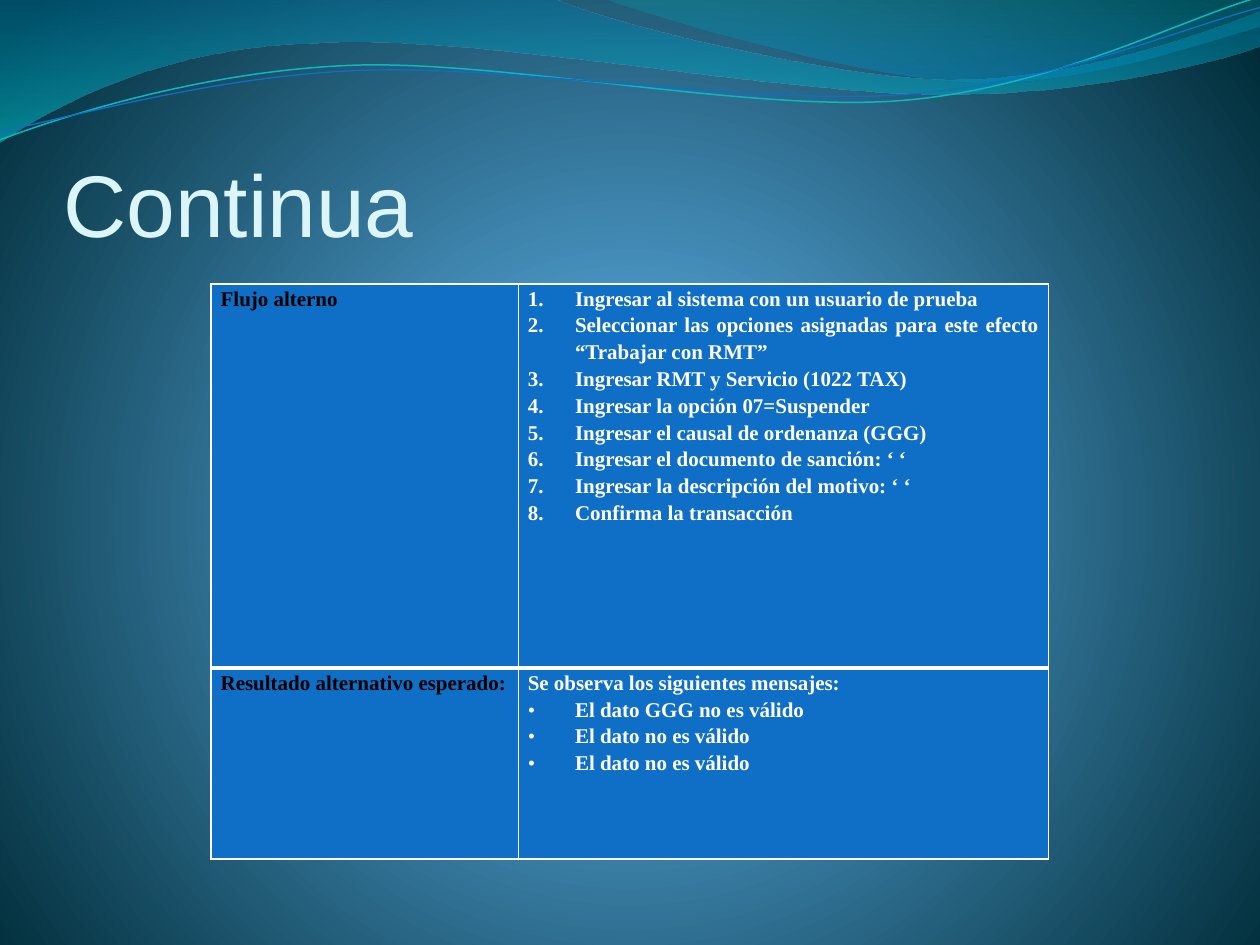
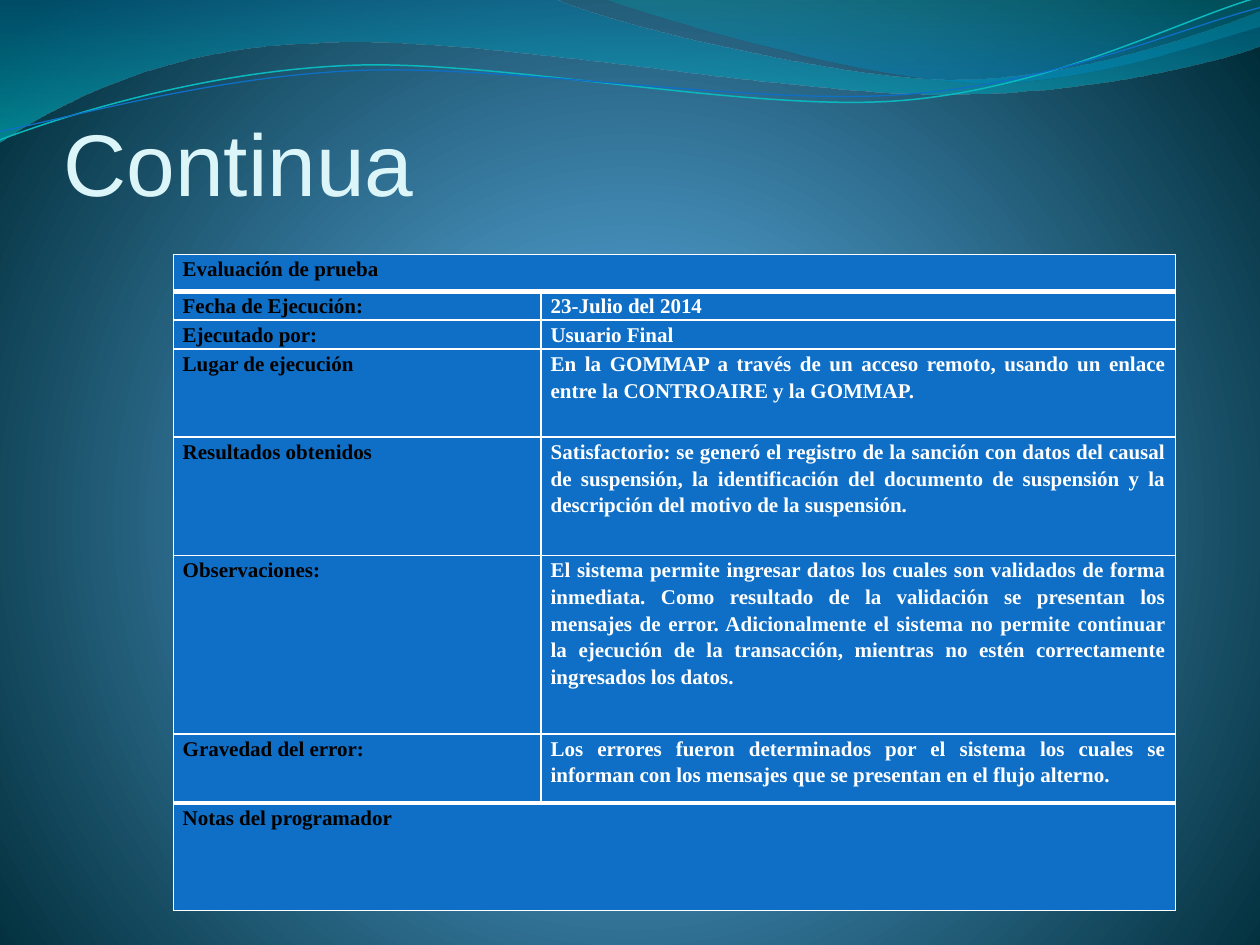
from lxml import etree
from pptx import Presentation
from pptx.dml.color import RGBColor
from pptx.enum.text import MSO_ANCHOR, PP_ALIGN
from pptx.oxml.ns import qn
from pptx.util import Pt

BOTTOM, JUSTIFY = MSO_ANCHOR.BOTTOM, PP_ALIGN.JUSTIFY

WHITE = RGBColor(0xFF, 0xFF, 0xFF)
BLACK = RGBColor(0x00, 0x00, 0x00)
BLUE = RGBColor(0x0F, 0x6F, 0xC6)
TEAL = RGBColor(0x0A, 0xB8, 0xBF)
TITLE_COLOR = RGBColor(0xDB, 0xF5, 0xF9)
SKY = RGBColor(0x4A, 0xA0, 0xD6)
STEEL = RGBColor(0x4C, 0x98, 0xC7)
NIGHT = RGBColor(0x00, 0x2C, 0x38)
WAVE_BLUE = RGBColor(0x00, 0x74, 0xA1)
WAVE_CYAN = RGBColor(0x00, 0xC6, 0xCF)
CREST_TEAL = RGBColor(0x00, 0xA1, 0xA9)
CREST_BLUE = RGBColor(0x00, 0x8B, 0xBF)

TITLE_FONT, TABLE_FONT = "Arial", "Times New Roman"
THIN, THICK = Pt(1), Pt(3)
FIRST_WAVE_ID = 101

# Paragraph markers: tag and attributes
PLAIN = None
NUMBER = ("a:buAutoNum", {"type": "arabicPeriod"})
BULLET = ("a:buChar", {"char": "•"})

# Waves, in points: one point is a straight step, three are a Bézier curve
BANDS = [
    ((0, 0),
     [[(316.8, -0.7)],
      [(342.7, 12.2), (478.1, 45.4), (545.8, 45.4)],
      [(614.2, 45.4), (689.8, 18.7), (720, 6.5)],
      [(720.7, 25.9)],
      [(707.8, 31.7), (626.4, 54.7), (537.1, 54)],
      [(446.4, 54), (275, 20.2), (185, 24.5)],
      [(92.9, 25.9), (33.1, 59.8), (-0.7, 81.4)]],
     [(0, WAVE_BLUE, 45), (100, WAVE_CYAN, 55)]),
    ((344.9, -0.7),
     [[(366.5, 7.9), (491, 44.6), (553.7, 46.8)],
      [(616.3, 49.7), (691.9, 23), (720, 15.1)],
      [(720, 0)]],
     [(0, CREST_TEAL, 30), (80, CREST_BLUE, 45)]),
]
STRANDS = [
    ((0, 79.9),
     [[(34.6, 67), (113.8, 41), (199.4, 37.4)],
      [(284.4, 33.8), (427, 64.1), (513.4, 57.6)],
      [(599.8, 51.1), (675.4, 10.8), (718.6, -1.4)]],
     TEAL, 0.85),
    ((0, 74.9),
     [[(33.8, 69.1), (118.1, 43.9), (203.8, 40.3)],
      [(290.2, 36.7), (429.8, 60.5), (516.2, 54)],
      [(601.9, 48.2), (677.5, 15.1), (720, 4.3)]],
     BLUE, 0.75),
]

# Each row: height, label, value paragraphs; a row without values spans both columns
PAGES = [
    {
        "title_height": 90, "left": 120.7, "top": 162.25, "columns": [175.5, 303],
        "thick_rules": {1},
        "rows": [
            (219.5, "Flujo alterno", [
                (NUMBER, "Ingresar al sistema con un usuario de prueba"),
                (NUMBER, "Seleccionar las opciones asignadas para este efecto “Trabajar con RMT”"),
                (NUMBER, "Ingresar RMT y Servicio (1022 TAX)"),
                (NUMBER, "Ingresar la opción 07=Suspender"),
                (NUMBER, "Ingresar el causal de ordenanza (GGG)"),
                (NUMBER, "Ingresar el documento de sanción: ‘ ‘"),
                (NUMBER, "Ingresar la descripción del motivo: ‘ ‘"),
                (NUMBER, "Confirma la transacción"),
            ]),
            (109, "Resultado alternativo esperado:", [
                (PLAIN, "Se observa los siguientes mensajes:"),
                (BULLET, "El dato GGG no es válido"),
                (BULLET, "El dato no es válido"),
                (BULLET, "El dato no es válido"),
            ]),
        ],
    },
    {
        "title_height": 67, "left": 99, "top": 145.5, "columns": [210.25, 362.5],
        "thick_rules": {1, 7},
        "rows": [
            (20.9, "Evaluación de prueba", []),
            (15.4, "Fecha de Ejecución:", [(PLAIN, "23-Julio del 2014")]),
            (15.4, "Ejecutado por:", [(PLAIN, "Usuario Final")]),
            (50.3, "Lugar de ejecución", [
                (PLAIN, "En la GOMMAP a través de un acceso remoto, usando un enlace "
                        "entre la CONTROAIRE y la GOMMAP."),
            ]),
            (67.5, "Resultados obtenidos", [
                (PLAIN, "Satisfactorio: se generó el registro de la sanción con datos del causal "
                        "de suspensión, la identificación del documento de suspensión y la "
                        "descripción del motivo de la suspensión."),
            ]),
            (102, "Observaciones:", [
                (PLAIN, "El sistema permite ingresar datos los cuales son validados de forma "
                        "inmediata. Como resultado de la validación se presentan los mensajes de "
                        "error. Adicionalmente el sistema no permite continuar la ejecución de la "
                        "transacción, mientras no estén correctamente ingresados los datos."),
            ]),
            (39.5, "Gravedad del error:", [
                (PLAIN, "Los errores fueron determinados por el sistema los cuales se informan "
                        "con los mensajes que se presentan en el flujo alterno."),
            ]),
            (61.5, "Notas del programador", []),
        ],
    },
]


def set_gradient(fill, owner, stops):
    """Give the fill its (position, colour, opacity) stops and return its XML."""
    fill.gradient()
    gradient = owner.find(".//" + qn("a:gradFill"))
    for child in list(gradient):
        gradient.remove(child)
    stop_list = etree.SubElement(gradient, qn("a:gsLst"))
    for position, color, opacity in stops:
        stop = etree.SubElement(stop_list, qn("a:gs"), pos=str(position * 1000))
        tint = etree.SubElement(stop, qn("a:srgbClr"), val=str(color))
        if opacity < 100:
            etree.SubElement(tint, qn("a:alpha"), val=str(opacity * 1000))
    return gradient


def add_wave(page, start, steps, closed):
    """Draw an outline, turning each three-point step into a Bézier curve."""
    builder = page.shapes.build_freeform(Pt(start[0]), Pt(start[1]))
    points = [(Pt(x), Pt(y)) for step in steps for x, y in step]
    builder.add_line_segments(points, close=closed)
    wave = builder.convert_to_shape()
    wave.shadow.inherit = False
    lines = iter(wave.element.findall(".//" + qn("a:lnTo")))
    for step in steps:
        first = next(lines)
        if len(step) == 3:
            curve = etree.Element(qn("a:cubicBezTo"))
            first.addprevious(curve)
            for line in (first, next(lines), next(lines)):
                curve.append(line[0])
                line.getparent().remove(line)
    return wave


deck = Presentation()
deck.slide_width, deck.slide_height = Pt(720), Pt(540)
pages = [deck.slides.add_slide(deck.slide_layouts[6]) for content in PAGES]

# Shared background: radial glow on the master
master = deck.slide_master
glow = set_gradient(master.background.fill, master.element,
                    [(0, SKY, 100), (25, STEEL, 100), (100, NIGHT, 100)])
circle = etree.SubElement(glow, qn("a:path"), path="circle")
etree.SubElement(circle, qn("a:fillToRect"), l="10000", t="110000", r="10000", b="100000")

# Shared waves along the top, drawn once and moved to the master
waves = []
for start, steps, stops in BANDS:
    band = add_wave(pages[0], start, steps, True)
    shade = set_gradient(band.fill, band.element, stops)
    etree.SubElement(shade, qn("a:lin"), ang="5400000", scaled="0")
    band.line.fill.background()
    waves.append(band)
for start, steps, color, width in STRANDS:
    strand = add_wave(pages[0], start, steps, False)
    strand.fill.background()
    strand.line.color.rgb = color
    strand.line.width = Pt(width)
    waves.append(strand)
for wave_id, wave in enumerate(waves, FIRST_WAVE_ID):
    wave.element.find(".//" + qn("p:cNvPr")).set("id", str(wave_id))
    master.element.cSld.spTree.append(wave.element)

for page, content in zip(pages, PAGES):
    # Title
    box = page.shapes.add_textbox(Pt(36.3), Pt(55.5), Pt(648), Pt(content["title_height"]))
    frame = box.text_frame
    frame.word_wrap = True
    frame.vertical_anchor = BOTTOM
    frame.margin_left = frame.margin_right = frame.margin_bottom = 0
    title = frame.paragraphs[0]
    title.text = "Continua"
    title.font.name, title.font.size = TITLE_FONT, Pt(50)
    title.font.color.rgb = TITLE_COLOR

    # Table grid
    rows, columns = content["rows"], content["columns"]
    table = page.shapes.add_table(
        len(rows), len(columns), Pt(content["left"]), Pt(content["top"]),
        Pt(sum(columns)), Pt(sum(row[0] for row in rows))).table
    table.first_row = table.horz_banding = False
    for column, width in zip(table.columns, columns):
        column.width = Pt(width)

    for index, (height, label, values) in enumerate(rows):
        table.rows[index].height = Pt(height)
        if not values:
            table.cell(index, 0).merge(table.cell(index, 1))
        top_rule, bottom_rule = (
            THICK if rule in content["thick_rules"] else THIN for rule in (index, index + 1))

        for cell, lines, color in zip(table.rows[index].cells,
                                      ([(PLAIN, label)], values), (BLACK, WHITE)):
            # Cell fill, margins and borders
            cell.fill.solid()
            cell.fill.fore_color.rgb = BLUE
            cell.margin_left = cell.margin_right = Pt(5.4)
            cell.margin_top = cell.margin_bottom = 0
            properties = cell._tc.get_or_add_tcPr()
            borders = (("a:lnL", THIN), ("a:lnR", THIN),
                       ("a:lnT", top_rule), ("a:lnB", bottom_rule))
            for order, (side, width) in enumerate(borders):
                border = etree.Element(qn(side), w=str(int(width)))
                paint = etree.SubElement(border, qn("a:solidFill"))
                etree.SubElement(paint, qn("a:srgbClr"), val=str(WHITE))
                properties.insert(order, border)

            # Cell text
            for number, (marker, text) in enumerate(lines):
                frame = cell.text_frame
                para = frame.add_paragraph() if number else frame.paragraphs[0]
                para.text = text
                if marker:
                    tag, attributes = marker
                    para_properties = para._p.get_or_add_pPr()
                    para_properties.set("marL", str(Pt(27)))
                    para_properties.set("indent", str(-Pt(27)))
                    etree.SubElement(para_properties, qn("a:buFont"), typeface=TABLE_FONT)
                    etree.SubElement(para_properties, qn(tag), attributes)
                para.alignment = JUSTIFY
                para.line_spacing = 1.15
                para.font.name, para.font.size = TABLE_FONT, Pt(12)
                para.font.bold = True
                para.font.color.rgb = color

deck.save("out.pptx")
